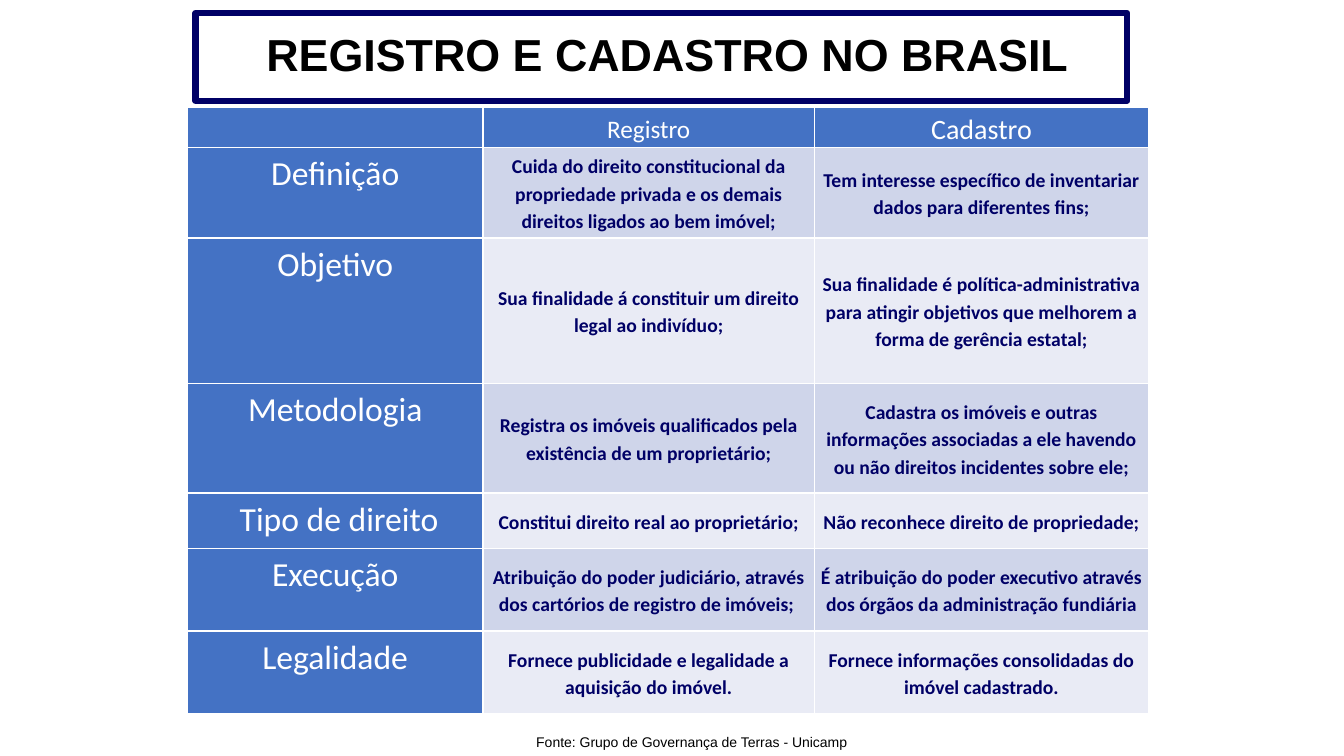
from pptx import Presentation
from pptx.dml.color import RGBColor
from pptx.enum.shapes import MSO_SHAPE as Shape
from pptx.enum.text import MSO_ANCHOR as Anchor, PP_ALIGN as Align
from pptx.util import Emu, Pt

PX = 9144  # 100 px to the inch
NAVY, BLUE, WHITE, BLACK = "000066", "4472C4", "FFFFFF", "000000"
BANDS = ["CFD5EA", "E9EBF5"]

COL_WIDTHS = [293, 329, 331]
ROW_HEIGHTS = [39, 90, 144, 109, 55, 82, 82]
HEADER = [("", 18), ("Registro", 18), ("Cadastro", 20)]
COMPARISON = [
    ("Definição",
     "Cuida do direito constitucional da propriedade privada e os demais direitos ligados ao bem imóvel;",
     "Tem interesse específico de inventariar dados para diferentes fins;"),
    ("Objetivo",
     "Sua finalidade á constituir um direito legal ao indivíduo;",
     "Sua finalidade é política-administrativa para atingir objetivos que melhorem a forma de gerência estatal;"),
    ("Metodologia",
     "Registra os imóveis qualificados pela existência de um proprietário;",
     "Cadastra os imóveis e outras informações associadas a ele havendo ou não direitos incidentes sobre ele;"),
    (" Tipo de direito",
     "Constitui direito real ao proprietário;",
     "Não reconhece direito de propriedade;"),
    ("Execução",
     "Atribuição do poder judiciário, através dos cartórios de registro de imóveis; ",
     "É atribuição do poder executivo através dos órgãos da administração fundiária"),
    ("Legalidade",
     "Fornece publicidade e legalidade a aquisição do imóvel.",
     "Fornece informações consolidadas do imóvel cadastrado."),
]


def px(n):
    return Emu(n * PX)


def rgb(value):
    return RGBColor.from_string(value)


class SlideBuilder:
    heading_font = "Arial"
    table_font = "Calibri"

    def __init__(self, slide):
        self.slide = slide

    def set_text(self, tf, text, size, color, font, bold=False, align=Align.CENTER, spacing=1.0):
        p = tf.paragraphs[0]
        p.text = text
        p.alignment = align
        p.line_spacing = spacing
        p.font.name, p.font.size, p.font.bold = font, Pt(size), bold
        p.font.color.rgb = rgb(color)

    def title(self, box, text):
        sp = self.slide.shapes.add_shape(Shape.RECTANGLE, *map(px, box))
        sp.shadow.inherit = False
        sp.fill.background()
        sp.line.color.rgb = rgb(NAVY)
        sp.line.width = Pt(4.5)
        sp.text_frame.word_wrap = True
        sp.text_frame.vertical_anchor = Anchor.MIDDLE
        self.set_text(sp.text_frame, text, 32, BLACK, self.heading_font, bold=True, spacing=0.9)

    def label(self, box, text):
        tf = self.slide.shapes.add_textbox(*map(px, box)).text_frame
        tf.word_wrap = True
        self.set_text(tf, text, 10, BLACK, self.heading_font, align=Align.LEFT)

    def table(self, left, top, widths, heights):
        """Add an empty table; white rules come from the default table style."""
        box = left, top, sum(widths), sum(heights)
        table = self.slide.shapes.add_table(len(heights), len(widths), *map(px, box)).table
        for column, width in zip(table.columns, widths):
            column.width = px(width)
        for row, height in zip(table.rows, heights):
            row.height = px(height)
        return table

    def cell(self, cell, text, size, fill, color=WHITE, bold=False, anchor=Anchor.MIDDLE):
        cell.fill.solid()
        cell.fill.fore_color.rgb = rgb(fill)
        cell.margin_left = cell.margin_right = px(3)
        cell.margin_top = cell.margin_bottom = 0
        cell.vertical_anchor = anchor
        self.set_text(cell.text_frame, text, size, color, self.table_font, bold, spacing=1.15)


def main():
    prs = Presentation()
    prs.slide_width, prs.slide_height = px(1333), px(750)
    s = SlideBuilder(prs.slides.add_slide(prs.slide_layouts[6]))

    s.title((194, 13, 924, 87), " REGISTRO E CADASTRO NO BRASIL")

    table = s.table(186, 107, COL_WIDTHS, ROW_HEIGHTS)
    for col, (text, size) in enumerate(HEADER):
        s.cell(table.cell(0, col), text, size, BLUE)
    for row, (topic, *answers) in enumerate(COMPARISON, start=1):
        s.cell(table.cell(row, 0), topic, 24, BLUE, anchor=Anchor.TOP)
        for col, answer in enumerate(answers, start=1):
            s.cell(table.cell(row, col), answer, 14, BANDS[(row - 1) % 2], NAVY, bold=True)

    s.label((522, 723, 581, 27), "Fonte: Grupo de Governança de Terras - Unicamp")
    prs.save("out.pptx")


if __name__ == "__main__":
    main()
